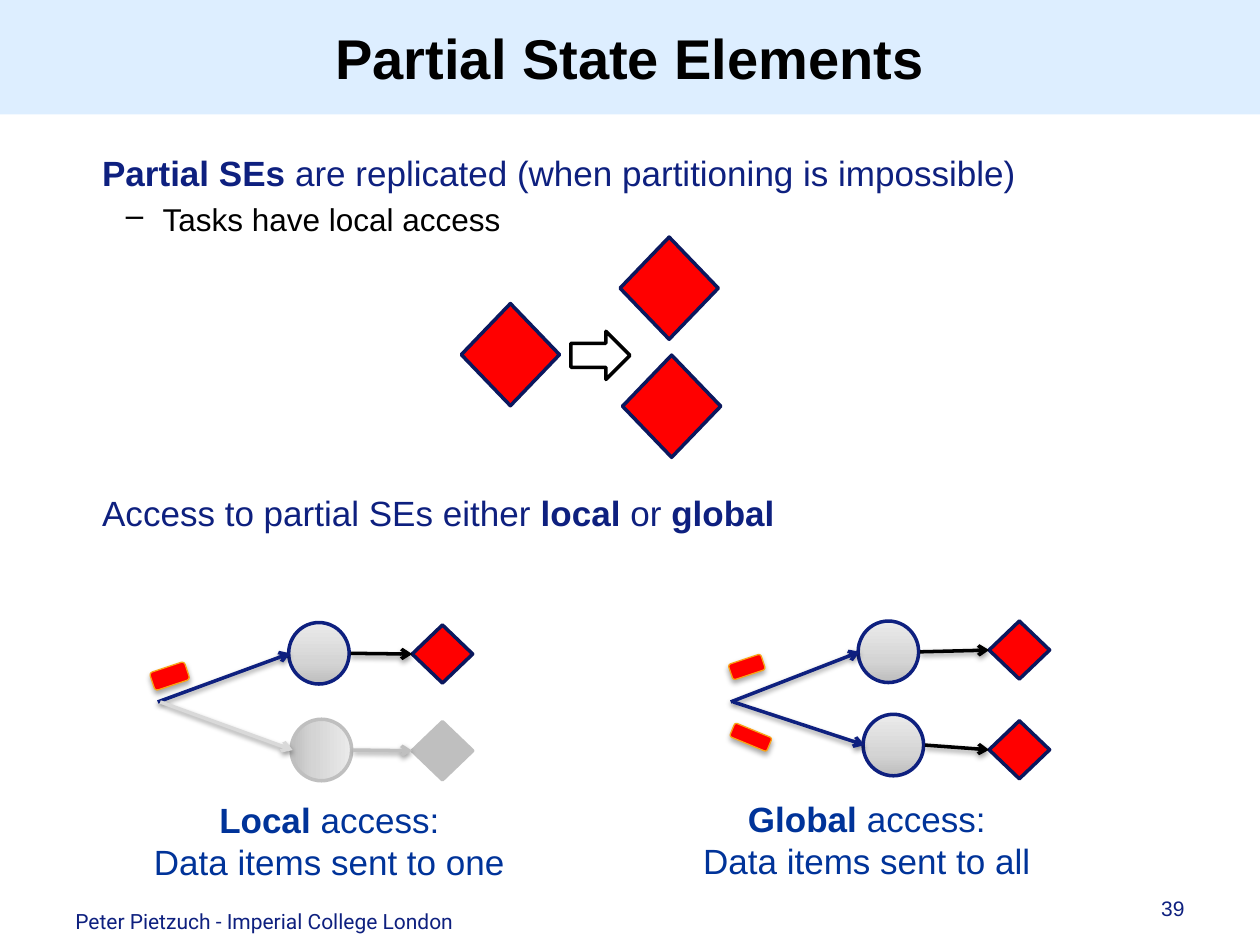
from lxml.etree import SubElement
from pptx import Presentation
from pptx.dml.color import RGBColor
from pptx.enum.shapes import MSO_CONNECTOR as Connector, MSO_SHAPE as Shape
from pptx.enum.text import MSO_ANCHOR as Anchor, PP_ALIGN as Align
from pptx.oxml.ns import qn
from pptx.util import Cm, Pt

BLACK = RGBColor(0x00, 0x00, 0x00)
PALE_BLUE = RGBColor(0xDD, 0xEE, 0xFF)
NAVY = RGBColor(0x0E, 0x20, 0x7F)
DARK_NAVY = RGBColor(0x0A, 0x18, 0x5E)
CAPTION_BLUE = RGBColor(0x00, 0x33, 0x99)
RED = RGBColor(0xFF, 0x00, 0x00)
ORANGE = RGBColor(0xF9, 0xA4, 0x16)
GREY = RGBColor(0xBF, 0xBF, 0xBF)
LIGHT_GREY = RGBColor(0xD9, 0xD9, 0xD9)

TASK_GRADIENT = ((0, "BDBDBD"), (35, "D4D4D4"), (100, "EBEBEB"))
TASK_SIZE = (1.22, 1.24)
SMALL_STATE = (1.22, 1.17)
LARGE_STATE = (1.98, 2.06)


class SlideBuilder:
    font = "Arial"
    line_width = 2

    def __init__(self, slide):
        self.slide = slide

    def text(self, left, top, width, height, paragraphs, size, color,
             align=Align.LEFT, font=None, wrap=True):
        """Each paragraph is a list of (wording, bold) spans."""
        box = self.slide.shapes.add_textbox(Cm(left), Cm(top), Cm(width), Cm(height))
        self.fill_text(box.text_frame, paragraphs, size, color, align, font, wrap)
        return box

    def fill_text(self, frame, paragraphs, size, color, align, font=None, wrap=True):
        frame.word_wrap = wrap
        for index, spans in enumerate(paragraphs):
            para = frame.add_paragraph() if index else frame.paragraphs[0]
            para.alignment = align
            for wording, bold in spans:
                span = para.add_run()
                span.text = wording
                span.font.name = font or self.font
                span.font.size = Pt(size)
                span.font.bold = bold
                span.font.color.rgb = color

    def indent(self, para, margin, first_line, bullet=None):
        properties = para._p.get_or_add_pPr()
        properties.set("marL", str(Cm(margin)))
        properties.set("indent", str(Cm(first_line)))
        if bullet:
            SubElement(properties, qn("a:buChar"), char=bullet)

    def shape(self, kind, left, top, size, fill=None, line=None, width=None):
        shape = self.slide.shapes.add_shape(kind, Cm(left), Cm(top), *map(Cm, size))
        shape.shadow.inherit = False
        if fill is None:
            shape.fill.background()
        else:
            shape.fill.solid()
            shape.fill.fore_color.rgb = fill
        if line is None:
            shape.line.fill.background()
        else:
            shape.line.color.rgb = line
            shape.line.width = Pt(width or self.line_width)
            SubElement(shape.line._get_or_add_ln(), qn("a:round"))
        return shape

    def state(self, left, top, size=SMALL_STATE, fill=RED, line=DARK_NAVY):
        return self.shape(Shape.DIAMOND, left, top, size, fill, line)

    def task(self, left, top, line=NAVY, angle=90):
        circle = self.shape(Shape.OVAL, left, top, TASK_SIZE, GREY, line)
        circle.fill.gradient()
        circle.fill.gradient_angle = angle
        stops = circle._element.spPr.find(qn("a:gradFill")).find(qn("a:gsLst"))
        for stop in list(stops):
            stops.remove(stop)
        for position, color in TASK_GRADIENT:
            stop = SubElement(stops, qn("a:gs"), pos=str(position * 1000))
            SubElement(stop, qn("a:srgbClr"), val=color)

    def data_item(self, left, top, size, rotation):
        item = self.shape(Shape.ROUNDED_RECTANGLE, left, top, size, RED, ORANGE, 0.75)
        item.rotation = rotation
        self.shadow(item, 35, 1.8)

    def arrow(self, start, end, color, target=None):
        line = self.slide.shapes.add_connector(
            Connector.STRAIGHT, *map(Cm, start), *map(Cm, end))
        if target is not None:
            line.end_connect(target, 1)
        line.line.color.rgb = color
        line.line.width = Pt(self.line_width)
        SubElement(line.line._get_or_add_ln(), qn("a:tailEnd"), type="arrow")
        self.shadow(line, 38, 1.6)

    def shadow(self, shape, opacity, distance):
        properties = shape._element.spPr
        effects = properties.find(qn("a:effectLst"))
        if effects is None:
            effects = SubElement(properties, qn("a:effectLst"))
        outer = SubElement(effects, qn("a:outerShdw"), blurRad=str(Pt(3.1)),
                           dist=str(Pt(distance)), dir="5400000", rotWithShape="0")
        color = SubElement(outer, qn("a:srgbClr"), val="000000")
        SubElement(color, qn("a:alpha"), val=str(opacity * 1000))


def main():
    deck = Presentation()
    deck.slide_width, deck.slide_height = Cm(25.4), Cm(19.05)
    page = SlideBuilder(deck.slides.add_slide(deck.slide_layouts[6]))

    # Title band
    band = page.shape(Shape.RECTANGLE, 0, 0, (25.4, 2.31), PALE_BLUE)
    band.text_frame.vertical_anchor = Anchor.MIDDLE
    page.fill_text(band.text_frame, [[("Partial State Elements", True)]],
                   32, BLACK, Align.CENTER)

    # Statements
    box = page.text(1.3, 2.92, 22.8, 1.9, [
        [("Partial SEs ", True), ("are replicated (when partitioning is impossible)", False)],
        [("Tasks have local access", False)],
    ], 20, NAVY)
    statement, detail = box.text_frame.paragraphs
    page.indent(statement, 0.51, 0)
    detail.space_before = Pt(4)
    page.indent(detail, 1.73, -0.74, "–")
    detail.runs[0].font.size = Pt(18)
    detail.runs[0].font.color.rgb = BLACK

    box = page.text(1.3, 9.78, 22.8, 1.1, [
        [("Access to partial SEs either ", False), ("local", True),
         (" or ", False), ("global", True)],
    ], 20, NAVY)
    page.indent(box.text_frame.paragraphs[0], 0.51, 0)

    # Replication of one state element
    for left, top in ((9.3, 6.12), (12.5, 4.78), (12.55, 7.16)):
        page.state(left, top, LARGE_STATE)
    page.shape(Shape.RIGHT_ARROW, 11.51, 6.68, (1.19, 0.97), line=BLACK)

    # Branches: source, task and state corners, then state fill and line,
    # task line and gradient angle, colours of the two arrows
    active = (RED, DARK_NAVY, NAVY, 90, NAVY, BLACK)
    idle = (GREY, GREY, GREY, 0, LIGHT_GREY, GREY)
    branches = (
        ((3.18, 14.15), (5.82, 12.55), (8.31, 12.6), active),
        ((3.23, 14.15), (5.87, 14.5), (8.31, 14.55), idle),
        ((14.73, 14.15), (17.3, 12.52), (19.94, 12.52), active),
        ((14.78, 14.15), (17.4, 14.4), (19.94, 14.53), active),
    )
    for source, task, state, style in branches:
        fill, edge, task_line, angle, first_color, second_color = style
        task_left, task_top = task
        middle = task_top + TASK_SIZE[1] / 2
        diamond = page.state(*state, fill=fill, line=edge)
        page.task(task_left, task_top, task_line, angle)
        page.arrow(source, (task_left + 0.03, middle), first_color)
        page.arrow((task_left + TASK_SIZE[0] + 0.03, middle), state, second_color, diamond)

    # Data items
    page.data_item(3.05, 13.44, (0.74, 0.38), 161.6)
    page.data_item(14.71, 13.28, (0.69, 0.33), 161.6)
    page.data_item(14.73, 14.71, (0.81, 0.3), 202.5)

    # Captions
    for left, top, width, scope, count in ((2.79, 15.98, 7.7, "Local", "one"),
                                           (13.87, 15.95, 7.21, "Global", "all")):
        page.text(left, top, width, 1.96, [
            [(scope, True), (" access:", False)],
            [(f"Data items sent to {count}", False)],
        ], 20, CAPTION_BLUE, Align.CENTER, wrap=False)

    # Footer and page number
    page.text(1.27, 18.19, 15.39, 0.71, [[("Peter Pietzuch - Imperial College London", False)]],
              12, NAVY, font="Roboto")
    page.text(18.85, 17.93, 5.28, 0.71, [[("39", False)]], 12, NAVY, Align.RIGHT)

    deck.save("out.pptx")


if __name__ == "__main__":
    main()
